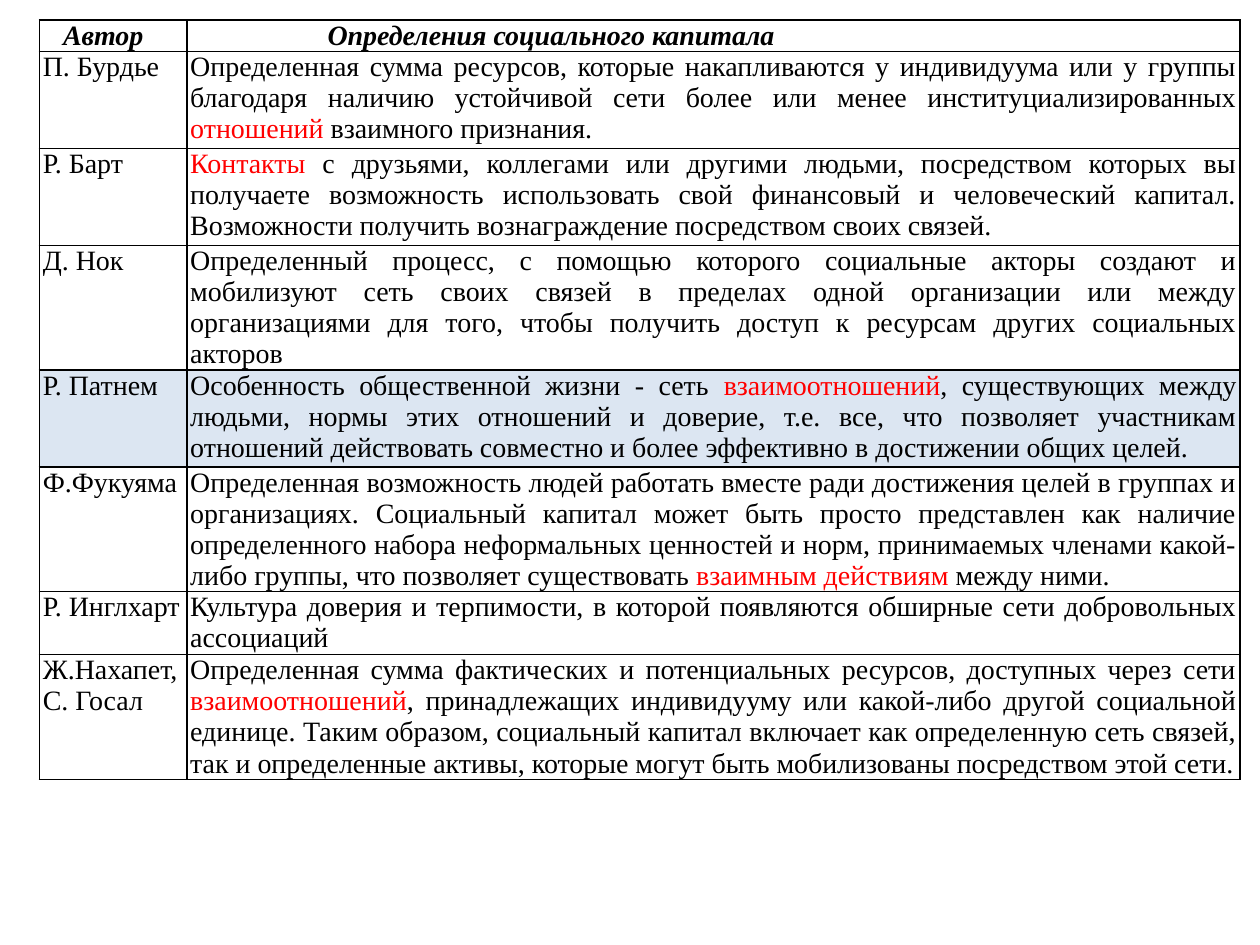
from lxml import etree
from pptx import Presentation
from pptx.dml.color import RGBColor
from pptx.enum import text
from pptx.oxml import ns
from pptx.util import Pt

BLACK = RGBColor(0x00, 0x00, 0x00)
RED = RGBColor(0xFF, 0x00, 0x00)
PALE_BLUE = RGBColor(0xDC, 0xE6, 0xF2)
FONT = "Times New Roman"
COLUMN_WIDTHS = [84.24, 601.92]
HEADER_INDENTS = [11.5, 78.5]
HIGHLIGHTED_AUTHOR = "Р. Патнем"

# Row height, author, definition; words between bars are red.
ROWS = [
    (18, "Автор", "Определения социального капитала"),
    (55.44, "П. Бурдье",
     "Определенная сумма ресурсов, которые накапливаются у индивидуума или у группы "
     "благодаря наличию устойчивой сети более или менее институциализированных "
     "|отношений| взаимного признания."),
    (55.44, "Р. Барт",
     "|Контакты| с друзьями, коллегами или другими людьми, посредством которых вы "
     "получаете возможность использовать свой финансовый и человеческий капитал. "
     "Возможности получить вознаграждение посредством своих связей."),
    (53.28, "Д. Нок",
     "Определенный процесс, с помощью которого социальные акторы создают и "
     "мобилизуют сеть своих связей в пределах одной организации или между "
     "организациями для того, чтобы получить доступ к ресурсам других социальных "
     "акторов"),
    (55.44, HIGHLIGHTED_AUTHOR,
     "Особенность общественной жизни - сеть |взаимоотношений|, существующих между "
     "людьми, нормы этих отношений и доверие, т.е. все, что позволяет участникам "
     "отношений действовать совместно и более эффективно в достижении общих целей."),
    (71.28, "Ф.Фукуяма",
     "Определенная возможность людей работать вместе ради достижения целей в группах и "
     "организациях. Социальный капитал может быть просто представлен как наличие "
     "определенного набора неформальных ценностей и норм, принимаемых членами "
     "какой-либо группы, что позволяет существовать |взаимным действиям |между ними."),
    (36, "Р. Инглхарт",
     "Культура доверия и терпимости, в которой появляются обширные сети добровольных "
     "ассоциаций"),
    (71.28, "Ж.Нахапет,\nС. Госал",
     "Определенная сумма фактических и потенциальных ресурсов, доступных через сети "
     "|взаимоотношений|, принадлежащих индивидууму или какой-либо другой социальной "
     "единице. Таким образом, социальный капитал включает как определенную сеть связей, "
     "так и определенные активы, которые могут быть мобилизованы посредством этой сети."),
]


def add_borders(cell):
    """Draw a black 1 pt line on all four sides; call before setting the fill."""
    tcPr = cell._tc.get_or_add_tcPr()
    for side in ("a:lnL", "a:lnR", "a:lnT", "a:lnB"):
        ln = etree.SubElement(tcPr, ns.qn(side), w=str(Pt(1)))
        fill = etree.SubElement(ln, ns.qn("a:solidFill"))
        etree.SubElement(fill, ns.qn("a:srgbClr"), val=str(BLACK))


def add_runs(p, marked, is_header):
    """Add one run per part of the text, with the parts between bars in red."""
    for i, part in enumerate(marked.split("|")):
        if not part:
            continue
        r = p.add_run()
        r.text = part
        r.font.name = FONT
        r.font.size = Pt(16)
        r.font.bold = r.font.italic = is_header
        r.font.color.rgb = RED if i % 2 else BLACK


prs = Presentation()
prs.slide_width, prs.slide_height = Pt(720), Pt(540)
slide = prs.slides.add_slide(prs.slide_layouts[6])

table = slide.shapes.add_table(
    len(ROWS), len(COLUMN_WIDTHS), Pt(22.5), Pt(11.5),
    Pt(sum(COLUMN_WIDTHS)), Pt(sum(row[0] for row in ROWS))).table
table.first_row = table.horz_banding = False
for column, width in zip(table.columns, COLUMN_WIDTHS):
    column.width = Pt(width)

for row, (height, *contents) in enumerate(ROWS):
    table.rows[row].height = Pt(height)
    for col, content in enumerate(contents):
        cell = table.cell(row, col)
        cell.margin_left = cell.margin_right = Pt(2)
        cell.margin_top = cell.margin_bottom = 0
        add_borders(cell)
        if contents[0] == HIGHLIGHTED_AUTHOR:
            cell.fill.solid()
            cell.fill.fore_color.rgb = PALE_BLUE
        else:
            cell.fill.background()
        tf = cell.text_frame
        for i, line in enumerate(content.split("\n")):
            p = tf.add_paragraph() if i else tf.paragraphs[0]
            if row == 0:
                p._p.get_or_add_pPr().set("marL", str(Pt(HEADER_INDENTS[col])))
            elif col == 1:
                p.alignment = text.PP_ALIGN.JUSTIFY
            add_runs(p, line, row == 0)

prs.save("out.pptx")
